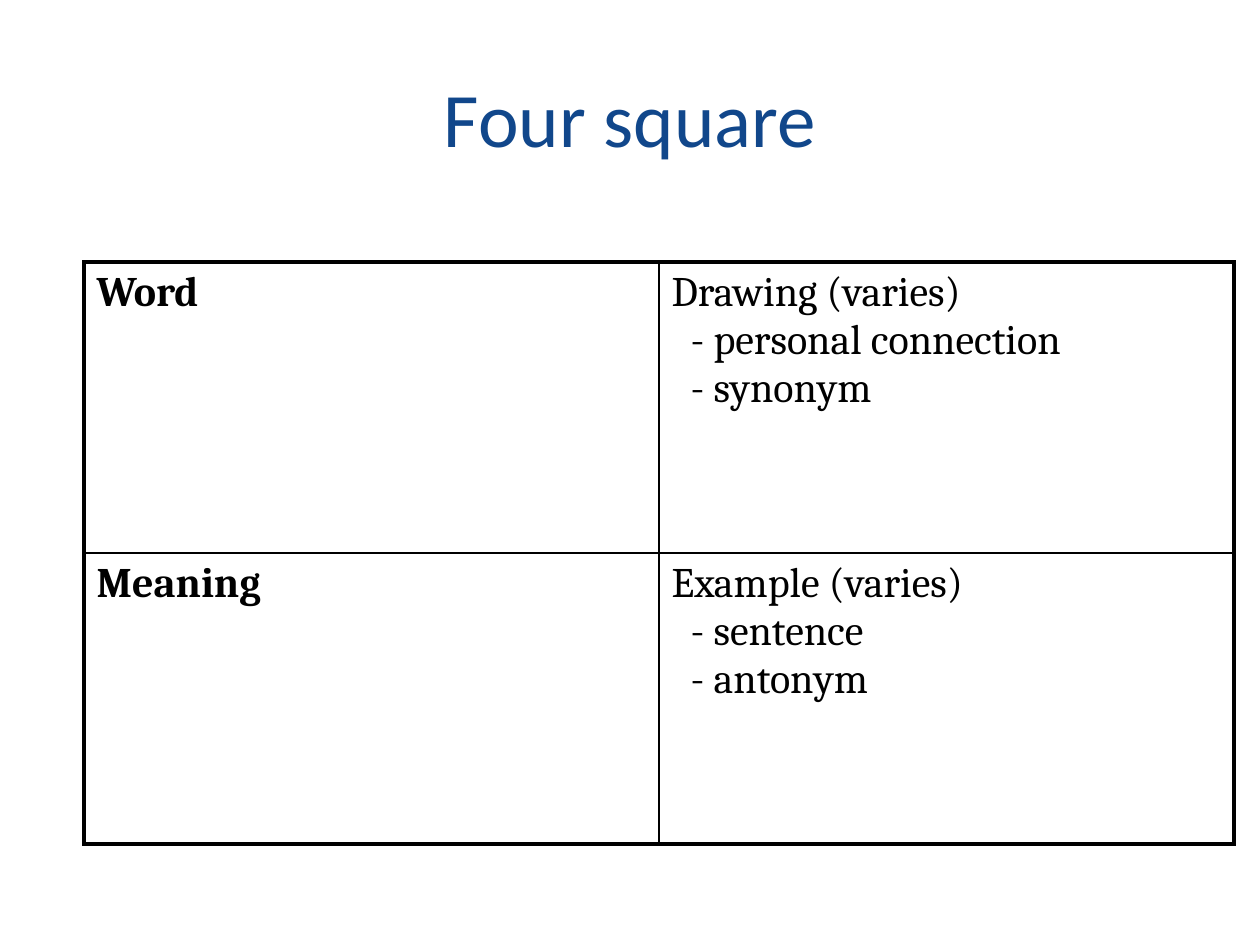
from lxml import etree
from pptx import Presentation
from pptx.dml.color import RGBColor
from pptx.enum.text import MSO_ANCHOR, PP_ALIGN
from pptx.oxml.ns import qn
from pptx.util import Emu, Pt

CENTER = PP_ALIGN.CENTER
MIDDLE = MSO_ANCHOR.MIDDLE
TOP = MSO_ANCHOR.TOP
EMU_PER_PX = 914400 / 126
COLORS = {"title": "11478B", "text": "000000", "border": "000000"}
OUTER_LINE, INNER_LINE = 2.25, 1


def px(length):
    return Emu(round(length * EMU_PER_PX))


class SlideBuilder:
    title_font = "Calibri"
    body_font = "Cambria"
    title_size = 44
    body_size = 24
    item_indent = 19

    def __init__(self, presentation):
        self.slide = presentation.slides.add_slide(presentation.slide_layouts[5])

    def format_runs(self, paragraph, font_name, size, color, bold=False):
        for run in paragraph.runs:
            run.font.name = font_name
            run.font.size = Pt(size)
            run.font.bold = bold
            run.font.color.rgb = RGBColor.from_string(COLORS[color])

    def title(self, text, left, top, width, height):
        shape = self.slide.shapes.title
        shape.left, shape.top = px(left), px(top)
        shape.width, shape.height = px(width), px(height)
        frame = shape.text_frame
        frame.text = text
        frame.vertical_anchor = MIDDLE
        paragraph = frame.paragraphs[0]
        paragraph.alignment = CENTER
        self.format_runs(paragraph, self.title_font, self.title_size, "title")

    def border(self, cell, side, width):
        properties = cell._tc.get_or_add_tcPr()
        line = etree.SubElement(properties, qn(f"a:ln{side}"), w=str(Pt(width)))
        fill = etree.SubElement(line, qn("a:solidFill"))
        etree.SubElement(fill, qn("a:srgbClr"), val=COLORS["border"])

    def cell(self, cell, heading, items):
        cell.vertical_anchor = TOP
        cell.text_frame.text = "\n".join([heading] + [f"- {item}" for item in items])
        for index, paragraph in enumerate(cell.text_frame.paragraphs):
            self.format_runs(paragraph, self.body_font, self.body_size, "text",
                             bold=not items)
            if index:
                paragraph._p.get_or_add_pPr().set("marL", str(px(self.item_indent)))

    def table(self, rows, left, top, column_width, row_height):
        row_count, column_count = len(rows), len(rows[0])
        table = self.slide.shapes.add_table(
            row_count, column_count, px(left), px(top),
            px(column_width * column_count), px(row_height * row_count)).table
        table.first_row = table.horz_banding = False
        for row_index, row in enumerate(rows):
            for column_index, (heading, items) in enumerate(row):
                cell = table.cell(row_index, column_index)
                self.cell(cell, heading, items)
                # Thick frame outside, thin lines between squares
                on_edge = {"L": column_index == 0,
                           "R": column_index == column_count - 1,
                           "T": row_index == 0,
                           "B": row_index == row_count - 1}
                for side, outer in on_edge.items():
                    self.border(cell, side, OUTER_LINE if outer else INNER_LINE)
                cell.fill.background()


def main():
    presentation = Presentation()
    presentation.slide_width, presentation.slide_height = px(1260), px(945)
    builder = SlideBuilder(presentation)

    # Title
    builder.title("Four square", 63, 38, 1134, 157)

    # Four squares
    squares = [
        [("Word", []), ("Drawing (varies)", ["personal connection", "synonym"])],
        [("Meaning", []), ("Example (varies)", ["sentence", "antonym"])],
    ]
    builder.table(squares, 84, 262, 575, 291)

    presentation.save("out.pptx")


if __name__ == "__main__":
    main()
